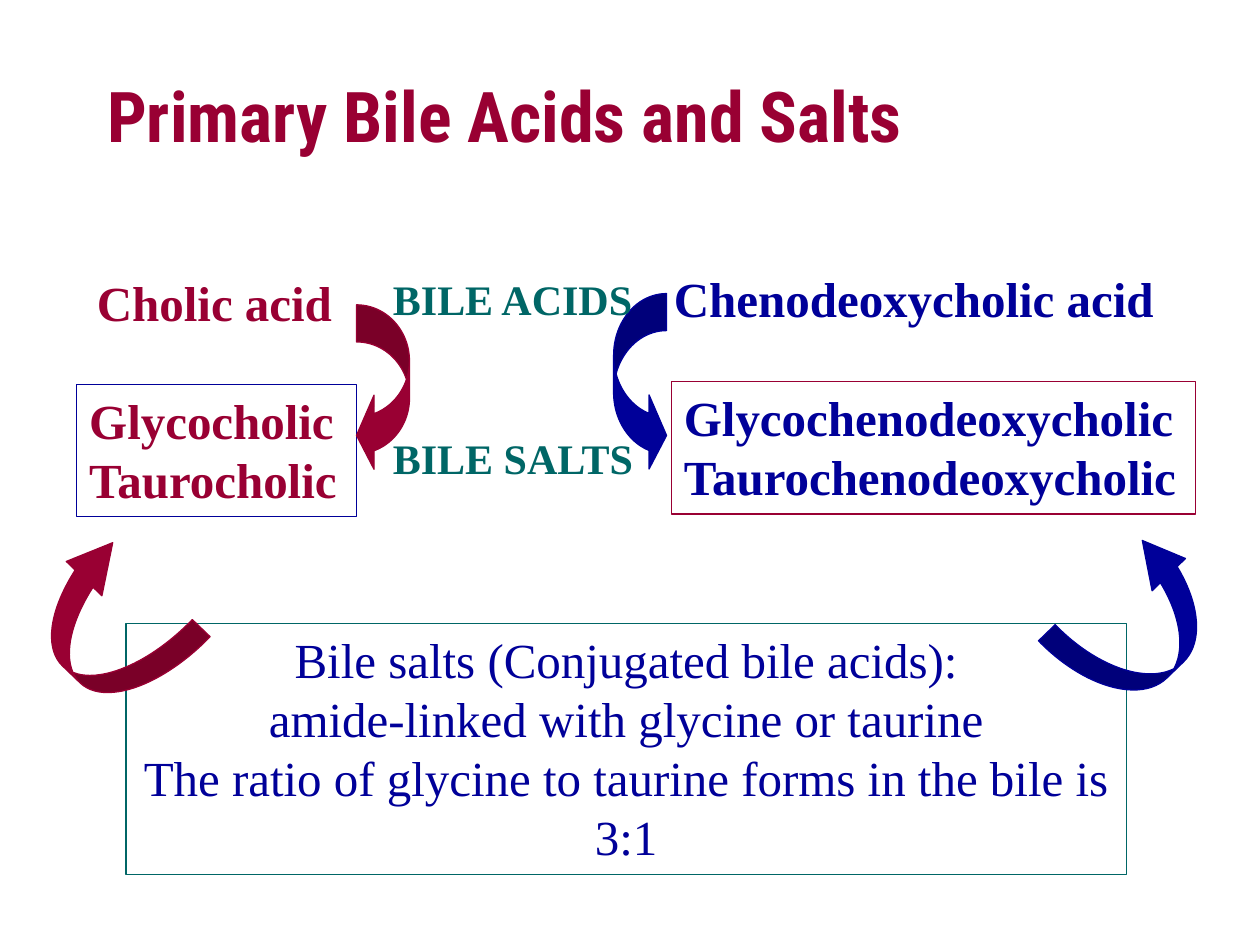
from pptx import Presentation
from pptx.dml.color import RGBColor
from pptx.enum.shapes import MSO_SHAPE
from pptx.enum.text import MSO_ANCHOR, MSO_AUTO_SIZE, PP_ALIGN
from pptx.util import Inches, Pt

RECT, CURVE = MSO_SHAPE.RECTANGLE, MSO_SHAPE.CURVED_RIGHT_ARROW
LEFT, CENTER = PP_ALIGN.LEFT, PP_ALIGN.CENTER
MIDDLE, TOP = MSO_ANCHOR.MIDDLE, MSO_ANCHOR.TOP
GROW = MSO_AUTO_SIZE.SHAPE_TO_FIT_TEXT
RED, BLUE, TEAL = "990033", "000099", "006666"


def color(code):
    return RGBColor.from_string(code)


class Deck:
    head = "Roboto Condensed"
    body = "Times New Roman"

    def __init__(self):
        self.deck = Presentation()
        self.deck.slide_width = Inches(10)
        self.deck.slide_height = Inches(7.5)
        self.slide = self.deck.slides.add_slide(self.deck.slide_layouts[5])
        self.shapes = self.slide.shapes

    def text(self, frame, lines, hue, size, bold=True, align=LEFT, font=body):
        for i, line in enumerate(lines):
            para = frame.paragraphs[0] if i == 0 else frame.add_paragraph()
            para.alignment = align
            run = para.add_run()
            run.text = line
            run.font.name = font
            run.font.size = Pt(size)
            run.font.bold = bold
            run.font.color.rgb = color(hue)

    def title(self, text, place):
        shape = self.shapes.title
        shape.left, shape.top, shape.width, shape.height = map(Inches, place)
        frame = shape.text_frame
        frame.vertical_anchor = MIDDLE
        self.text(frame, [text], RED, 40, font=self.head)
        frame.paragraphs[0].line_spacing = 0.9

    def label(self, text, place, hue, size=28, wrap=False):
        frame = self.shapes.add_textbox(*map(Inches, place)).text_frame
        frame.word_wrap = wrap
        frame.auto_size = GROW
        self.text(frame, [text], hue, size)

    def shape(self, kind, place, edge):
        shape = self.shapes.add_shape(kind, *map(Inches, place))
        shape.shadow.inherit = False
        shape.line.color.rgb = color(edge)
        shape.line.width = Pt(0.75)
        return shape

    def box(self, lines, place, hue, edge, bold=True, align=LEFT):
        shape = self.shape(RECT, place, edge)
        shape.fill.background()
        frame = shape.text_frame
        frame.word_wrap = False
        frame.auto_size = GROW
        frame.vertical_anchor = TOP
        self.text(frame, lines, hue, 28, bold, align)

    def arrow(self, place, hue, bends, flips=(), turn=0):
        shape = self.shape(CURVE, place, hue)
        shape.fill.solid()
        shape.fill.fore_color.rgb = color(hue)
        for i, bend in enumerate(bends):
            shape.adjustments[i] = bend
        shape.rotation = turn
        for flip in flips:
            shape.element.spPr.xfrm.set(flip, "1")


def main():
    page = Deck()
    page.title("Primary Bile Acids and Salts", (0.75, 0.33, 8.5, 1.25))
    page.label("Chenodeoxycholic acid", (5.25, 2.08, 4.11, 0.57), BLUE, wrap=True)

    # Conjugated salts and their summary
    page.box(["Bile salts (Conjugated bile acids):",
              "amide-linked with glycine or taurine",
              "The ratio of glycine to taurine forms in the bile is",
              "3:1"], (1, 4.95, 7.94, 1.99), BLUE, TEAL, False, CENTER)
    page.box(["Glycocholic", "Taurocholic"], (0.61, 3.05, 2.22, 1.05), RED, BLUE)
    page.box(["Glycochenodeoxycholic", "Taurochenodeoxycholic"],
             (5.33, 3.03, 4.16, 1.05), BLUE, RED)

    # Arrows from acids to salts, then from summary to salts
    wide, slim = (0.7, 1.4, 0.33), (0.2, 0.4, 0.37)
    page.arrow((2.83, 2.42, 0.42, 1.33), RED, wide, ["flipH"])
    page.arrow((4.87, 2.33, 0.42, 1.42), BLUE, wide)
    page.arrow((8.58, 4.29, 0.92, 1.33), BLUE, slim, ["flipH", "flipV"], 46)
    page.arrow((0.38, 4.33, 0.98, 1.27), RED, slim, ["flipV"], 314)

    # Acid name and row headings
    page.label("Cholic acid", (0.67, 2.11, 2.19, 0.57), RED)
    page.label("BILE ACIDS", (3.02, 2.12, 2.12, 0.51), TEAL, 24)
    page.label("BILE SALTS", (3.02, 3.38, 2.13, 0.5), TEAL, 24)

    page.deck.save("out.pptx")


if __name__ == "__main__":
    main()
